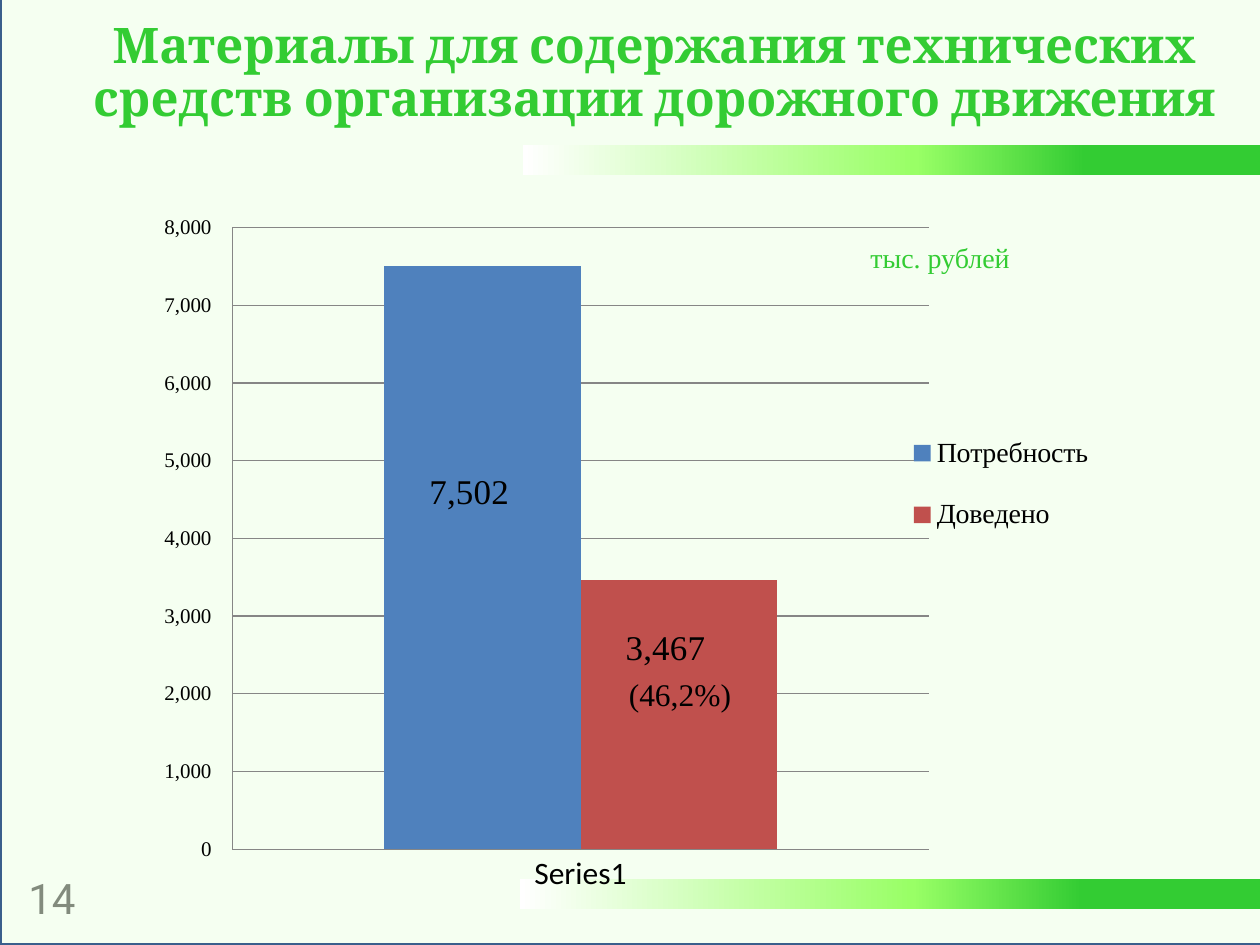
from copy import deepcopy

from lxml import etree
from pptx import Presentation
from pptx.chart.data import CategoryChartData
from pptx.dml.color import RGBColor
from pptx.enum.chart import XL_CHART_TYPE, XL_LABEL_POSITION, XL_LEGEND_POSITION, XL_TICK_MARK
from pptx.enum.shapes import MSO_SHAPE
from pptx.enum.text import MSO_ANCHOR, PP_ALIGN
from pptx.oxml import parse_xml
from pptx.oxml.ns import nsdecls, qn
from pptx.util import Emu, Pt

COLUMNS = XL_CHART_TYPE.COLUMN_CLUSTERED
NO_TICK = XL_TICK_MARK.NONE
LABEL_CENTER = XL_LABEL_POSITION.CENTER
LEGEND_RIGHT = XL_LEGEND_POSITION.RIGHT
RECTANGLE = MSO_SHAPE.RECTANGLE
TOP = MSO_ANCHOR.TOP
LEFT, CENTER = PP_ALIGN.LEFT, PP_ALIGN.CENTER

SCALE = 914400 / 126
SERIF = "Times New Roman"
COLORS = {
    "green": "33CC33", "lime": "99FF66", "white": "FFFFFF", "frame": "3A5F8C",
    "gray": "808080", "grid": "868686", "black": "000000",
    "need": "4F81BD", "received": "C0504D",
}


def px(*lengths):
    return [Emu(round(length * SCALE)) for length in lengths]


def write(text, box=None, at=None, size=16, font=SERIF, color="black", bold=False, align=LEFT):
    if box is None:
        box = page.shapes.add_textbox(*px(*at))
    frame = box.text_frame
    frame.word_wrap = True
    frame.vertical_anchor = TOP
    para = frame.paragraphs[0]
    para.alignment = align
    span = para.add_run()
    span.text = text
    span.font.size = Pt(size)
    span.font.name = font
    span.font.bold = bold
    span.font.color.rgb = RGBColor.from_string(COLORS[color])
    return para


deck = Presentation()
deck.slide_width, deck.slide_height = px(1260, 945)
page = deck.slides.add_slide(deck.slide_layouts[5])

write("14", at=(16, 866, 88, 63), size=24, font="Roboto", color="gray")

backdrop = page.shapes.add_shape(RECTANGLE, *px(0, -4, 1263, 949))
backdrop.shadow.inherit = False
backdrop.fill.solid()
backdrop.fill.fore_color.rgb = RGBColor.from_string(COLORS["lime"])
tint = backdrop._element.spPr.find(qn("a:solidFill"))[0]
etree.SubElement(tint, qn("a:alpha")).set("val", "9000")
backdrop.line.color.rgb = RGBColor.from_string(COLORS["frame"])
backdrop.line.width = Pt(2)

title = page.shapes.title
title.left, title.top, title.width, title.height = px(44, 15, 1221, 120)
heading = write("Материалы для содержания технических средств организации дорожного движения",
                box=title, size=28, font="Cambria", color="green", bold=True, align=CENTER)
heading.line_spacing = 0.9
heading.space_before = Pt(7.5)
page.shapes._spTree.append(title._element)

for left, top in ((520, 879), (523, 145)):
    band = page.shapes.add_shape(RECTANGLE, *px(left, top, 740, 30))
    band.shadow.inherit = False
    band.line.fill.background()
    band.fill.gradient()
    band.fill.gradient_angle = 180
    stop_list = band._element.spPr.find(qn("a:gradFill")).find(qn("a:gsLst"))
    stop_list.append(deepcopy(stop_list[0]))
    stops = ((0.24, "green"), (0.47, "lime"), (1, "white"))
    for stop, (position, color) in zip(band.fill.gradient_stops, stops):
        stop.position = position
        stop.color.rgb = RGBColor.from_string(COLORS[color])

data = CategoryChartData(number_format="#,##0")
data.categories = ["Series1"]
data.add_series("Потребность", [7502])
data.add_series("Доведено", [3467])
chart = page.shapes.add_chart(COLUMNS, *px(110, 196, 1092, 696), data).chart
chart.has_title = False
chart.font.size = Pt(18)
chart.font.name = "Calibri"
chart.font.color.rgb = RGBColor.from_string(COLORS["black"])

chart.has_legend = True
chart.legend.position = LEGEND_RIGHT
chart.legend.include_in_layout = False
chart.legend.font.size = Pt(16)
chart.legend.font.name = SERIF

amounts = chart.value_axis
amounts.minimum_scale, amounts.maximum_scale, amounts.major_unit = 0, 8000, 1000
amounts.tick_labels.font.size = Pt(12)
amounts.tick_labels.font.name = SERIF
amounts.tick_labels.number_format = "#,##0_р_."
amounts.tick_labels.number_format_is_linked = False
for axis in (amounts, chart.category_axis):
    axis.major_tick_mark = axis.minor_tick_mark = NO_TICK
    axis.format.line.color.rgb = RGBColor.from_string(COLORS["grid"])
amounts.major_gridlines.format.line.color.rgb = RGBColor.from_string(COLORS["grid"])

LAYOUT = "<c:layout %s><c:manualLayout>%s</c:manualLayout></c:layout>"
FRAME = (
    '<c:xMode val="edge"/><c:yMode val="edge"/>'
    '<c:x val="%s"/><c:y val="%s"/><c:w val="%s"/><c:h val="%s"/>'
)
plot_layout = '<c:layoutTarget val="inner"/>' + FRAME % (0.112, 0.046, 0.638, 0.901)
legend_layout = FRAME % (0.726, 0.306, 0.18, 0.223)
label_layout = '<c:x val="-0.012"/><c:y val="-0.095"/>'

plot_area = chart._chartSpace.chart.plotArea
legend = chart.legend._element
for part, place, layout in ((plot_area, 0, plot_layout), (legend, 1, legend_layout)):
    for old_layout in part.findall(qn("c:layout")):
        part.remove(old_layout)
    part.insert(place, parse_xml(LAYOUT % (nsdecls("c"), layout)))

bars = chart.plots[0]
bars.gap_width = 155
bars.overlap = 0
bars.vary_by_categories = False
for series, color in zip(bars.series, ("need", "received")):
    series.format.fill.solid()
    series.format.fill.fore_color.rgb = RGBColor.from_string(COLORS[color])
    label = series.points[0].data_label
    label.font.size = Pt(20)
    label.font.name = SERIF
    label.font.color.rgb = RGBColor.from_string(COLORS["black"])
    label.position = LABEL_CENTER
    label_xml = series._element.xpath(".//c:dLbl")[0]
    label_xml.insert(1, parse_xml(LAYOUT % (nsdecls("c"), label_layout)))
    for leader in series._element.xpath(".//c:showLeaderLines"):
        leader.set("val", "0")

write("тыс. рублей", at=(858, 234, 260, 47), color="green")
write("(46,2%)", at=(581, 669, 198, 50), size=18, align=CENTER)

deck.save("out.pptx")
